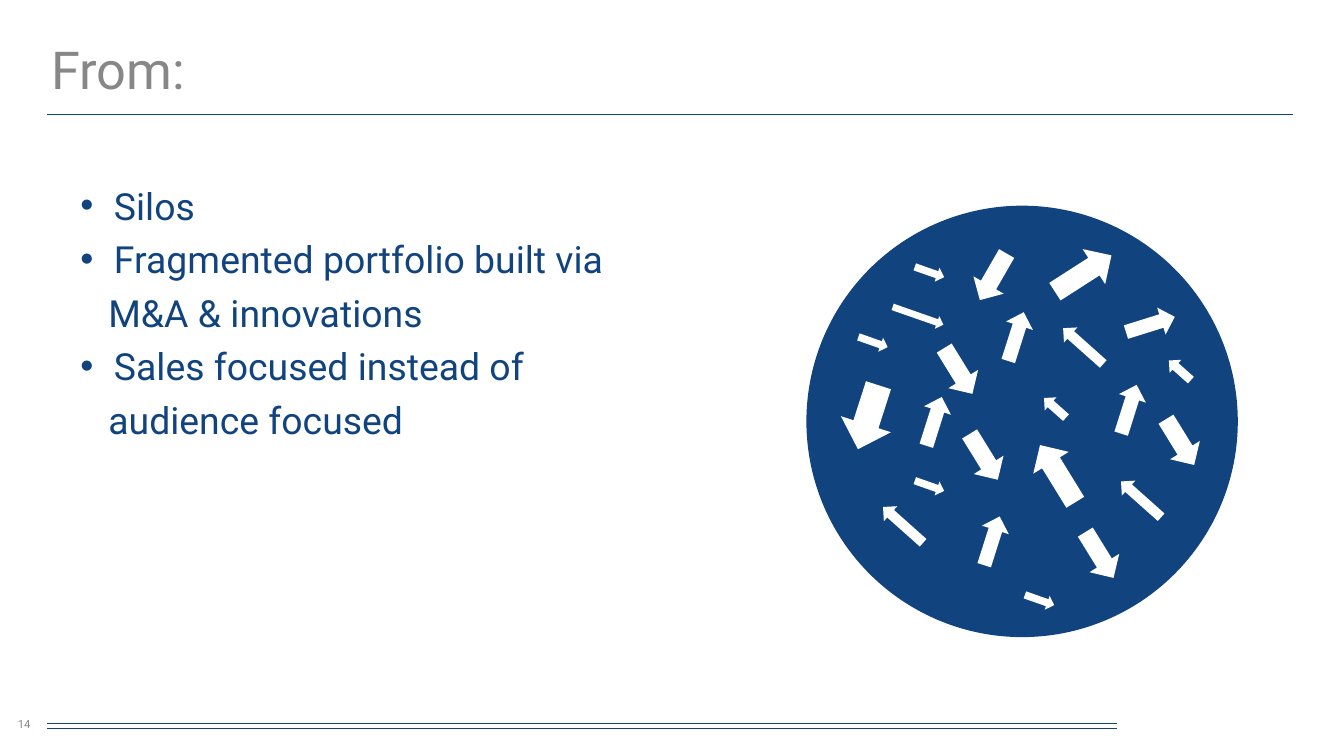
from lxml import etree
from pptx import Presentation
from pptx.dml.color import RGBColor
from pptx.enum.shapes import MSO_CONNECTOR, MSO_SHAPE
from pptx.enum.text import MSO_ANCHOR, PP_ALIGN
from pptx.oxml.ns import qn
from pptx.util import Pt

COLORS = {"blue": "11447F", "gray": "878787", "white": "FFFFFF"}
FONT = "Roboto"


def format_paragraph(paragraph, size, color):
    for run in paragraph.runs:
        run.font.name = FONT
        run.font.size = Pt(size)
        run.font.color.rgb = RGBColor.from_string(COLORS[color])


def add_filled_shape(kind, left, top, width, height, color):
    shape = slide.shapes.add_shape(kind, Pt(left), Pt(top), Pt(width), Pt(height))
    shape.shadow.inherit = False
    shape.fill.solid()
    shape.fill.fore_color.rgb = RGBColor.from_string(COLORS[color])
    shape.line.fill.background()
    return shape


presentation = Presentation()
presentation.slide_width = Pt(720)
presentation.slide_height = Pt(405)
slide = presentation.slides.add_slide(presentation.slide_layouts[5])

# Footer and title rules: right end, height
for right, y in [(598.3, 390.2), (598.3, 387.4), (692.6, 61.2)]:
    rule = slide.shapes.add_connector(MSO_CONNECTOR.STRAIGHT, Pt(25.2), Pt(y), Pt(right), Pt(y))
    rule.line.color.rgb = RGBColor.from_string(COLORS["blue"])
    rule.line.width = Pt(0.25)
    etree.SubElement(rule._element.spPr, qn("a:effectLst"))

title = slide.shapes.title
title.left, title.top, title.width, title.height = Pt(20.2), Pt(16.6), Pt(648), Pt(44.6)
title.text_frame.text = "From:"
title.text_frame.vertical_anchor = MSO_ANCHOR.MIDDLE
heading = title.text_frame.paragraphs[0]
heading.alignment = PP_ALIGN.LEFT
heading.line_spacing = 0.9
format_paragraph(heading, 28, "gray")

# Bullet list: text, whether the line starts a bullet
lines = [
    ("Silos", True),
    ("Fragmented portfolio built via", True),
    ("M&A & innovations", False),
    ("Sales focused instead of", True),
    ("audience focused", False),
]
body = slide.shapes.add_textbox(Pt(36), Pt(94.3), Pt(648), Pt(206))
body.text_frame.word_wrap = True
for index, (text, bulleted) in enumerate(lines):
    paragraph = body.text_frame.paragraphs[0] if index == 0 else body.text_frame.add_paragraph()
    paragraph.text = text
    properties = paragraph._p.get_or_add_pPr()
    properties.set("marL", str(Pt(18 if bulleted else 15)))
    properties.set("indent", str(Pt(-18 if bulleted else 0)))
    if bulleted:
        etree.SubElement(properties, qn("a:buFont"), typeface="Arial")
        etree.SubElement(properties, qn("a:buChar"), char="•")
    if index > 0:
        paragraph.space_before = Pt(4.7)
    format_paragraph(paragraph, 20, "blue")

add_filled_shape(MSO_SHAPE.OVAL, 432, 110.2, 231.1, 231.1, "blue")

# Arrows inside the circle: width, height, rotation, top left corners
arrow_groups = [
    (28.8, 18.7, 119.9, [(517.7, 139)]),
    (28.8, 18.7, 58.4, [(512.6, 235.4), (574.6, 288), (617.8, 227.5), (499, 189.4)]),
    (36, 22.3, 327.3, [(562.3, 135.4)]),
    (36, 22.3, 238.4, [(548.6, 242.6)]),
    (36, 28.1, 107.8, [(447.1, 209.5)]),
    (28.8, 7.2, 19.3, [(477.4, 165.6)]),
    (16.6, 7.9, 19.3, [(548.6, 317.5), (459.4, 179.3), (489.6, 141.8), (489.6, 256.3)]),
    (28.8, 10.8, 221.7, [(596.9, 262.1), (469.4, 275.8), (565.9, 180)]),
    (15.8, 9.4, 221.7, [(557.3, 213.8), (624.2, 193.7)]),
    (27.4, 15.1, 287.6, [(517.7, 282.2), (486.7, 218.2), (591.1, 211.7), (530.6, 172.8)]),
    (27.4, 15.1, 342.7, [(602.6, 166.3)]),
]
for width, height, rotation, corners in arrow_groups:
    for left, top in corners:
        arrow = add_filled_shape(MSO_SHAPE.RIGHT_ARROW, left, top, width, height, "white")
        arrow.rotation = rotation

slide_number = slide.shapes.add_textbox(Pt(0), Pt(377.3), Pt(25.9), Pt(21.6))
slide_number.text_frame.word_wrap = True
slide_number.text_frame.vertical_anchor = MSO_ANCHOR.MIDDLE
slide_number.text_frame.text = "14"
slide_number.text_frame.paragraphs[0].alignment = PP_ALIGN.CENTER
format_paragraph(slide_number.text_frame.paragraphs[0], 6, "gray")

presentation.save("out.pptx")
